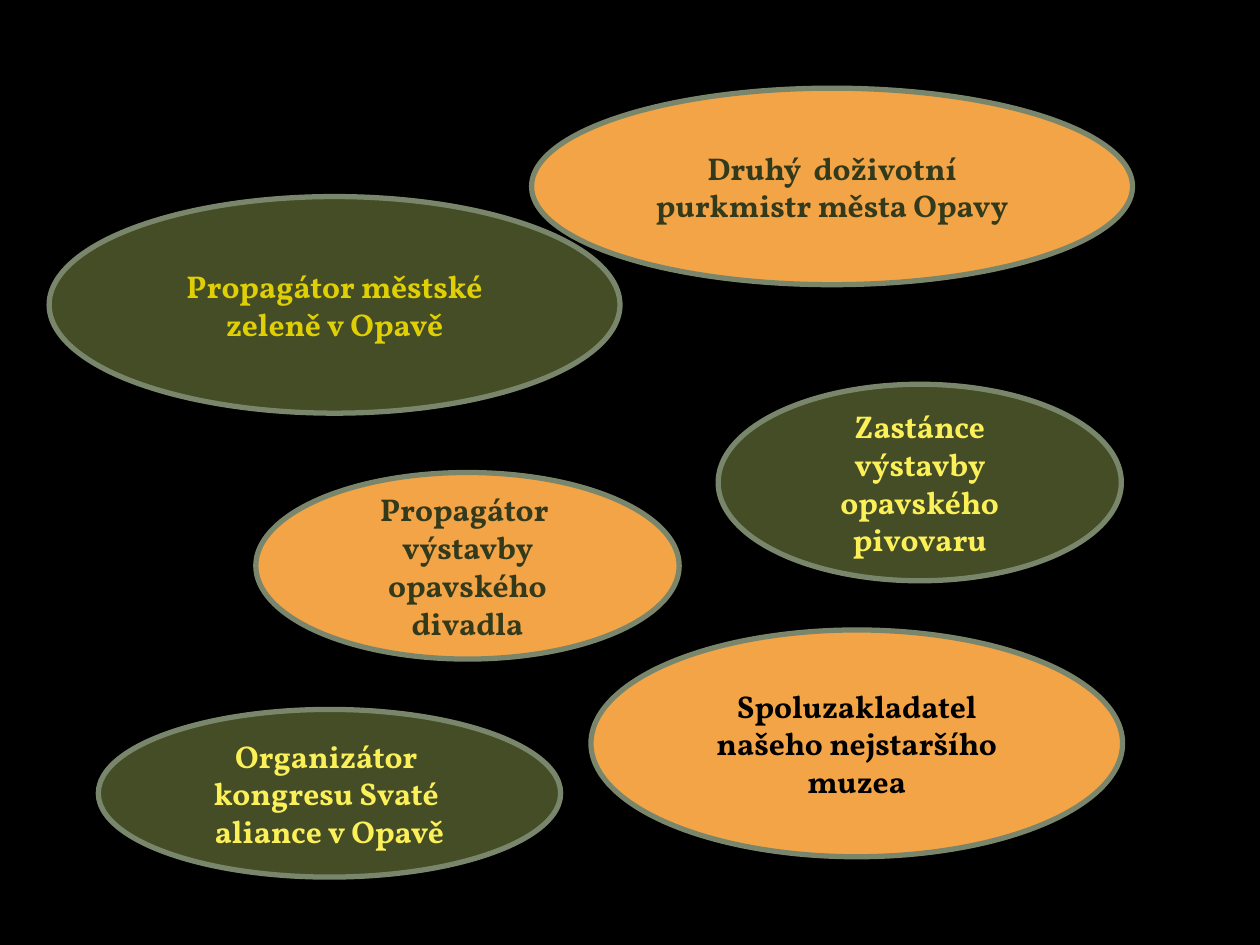
from pptx import Presentation
from pptx.dml.color import RGBColor
from pptx.enum import shapes, text
from pptx.util import Pt

BLACK = RGBColor(0x00, 0x00, 0x00)
ORANGE = RGBColor(0xF3, 0xA4, 0x47)
GREEN = RGBColor(0x44, 0x4D, 0x26)
OUTLINE = RGBColor(0x7A, 0x86, 0x6C)
DARK_GREEN = RGBColor(0x33, 0x3A, 0x1C)
GOLD = RGBColor(0xDF, 0xCF, 0x04)
YELLOW = RGBColor(0xFC, 0xF0, 0x59)


class Deck:
    """Holds the style and the current slide."""
    font = "Vollkorn"
    size = Pt(18)
    line_width = Pt(3)

    def __init__(self, prs):
        self.s = prs.slides.add_slide(prs.slide_layouts[6])

    def background(self, color):
        fill = self.s.background.fill
        fill.solid()
        fill.fore_color.rgb = color

    def ellipse(self, words, box, fill, color):
        sp = self.s.shapes.add_shape(
            shapes.MSO_SHAPE.OVAL, *[Pt(v) for v in box])
        sp.shadow.inherit = False
        sp.fill.solid()
        sp.fill.fore_color.rgb = fill
        sp.line.color.rgb = OUTLINE
        sp.line.width = self.line_width
        tf = sp.text_frame
        tf.word_wrap = True
        tf.vertical_anchor = text.MSO_ANCHOR.MIDDLE
        p = tf.paragraphs[0]
        p.text = words
        p.alignment = text.PP_ALIGN.CENTER
        p.font.name = self.font
        p.font.size = self.size
        p.font.bold = True
        p.font.color.rgb = color


# Roles: wording, (left, top, width, height), fill, text colour
ROLES = [
    ("Druhý  doživotní purkmistr města Opavy",
     (303.8, 50.4, 343.4, 112.3), ORANGE, DARK_GREEN),
    ("Propagátor městské zeleně v Opavě",
     (28.1, 112.3, 326.2, 123.8), GREEN, GOLD),
    ("Spoluzakladatel našeho nejstaršího muzea",
     (337.7, 360, 303.8, 129.6), ORANGE, BLACK),
    ("Propagátor  výstavby opavského divadla",
     (146.2, 270, 241.9, 106.6), ORANGE, DARK_GREEN),
    ("Zastánce výstavby opavského pivovaru",
     (410.4, 219.6, 230.4, 112.3), GREEN, YELLOW),
    ("Organizátor  kongresu Svaté  aliance v Opavě",
     (56.2, 405.4, 264.2, 95.8), GREEN, YELLOW),
]


def main():
    prs = Presentation()
    prs.slide_width, prs.slide_height = Pt(720), Pt(540)
    deck = Deck(prs)
    deck.background(BLACK)
    for role in ROLES:
        deck.ellipse(*role)
    prs.save("out.pptx")


if __name__ == "__main__":
    main()
